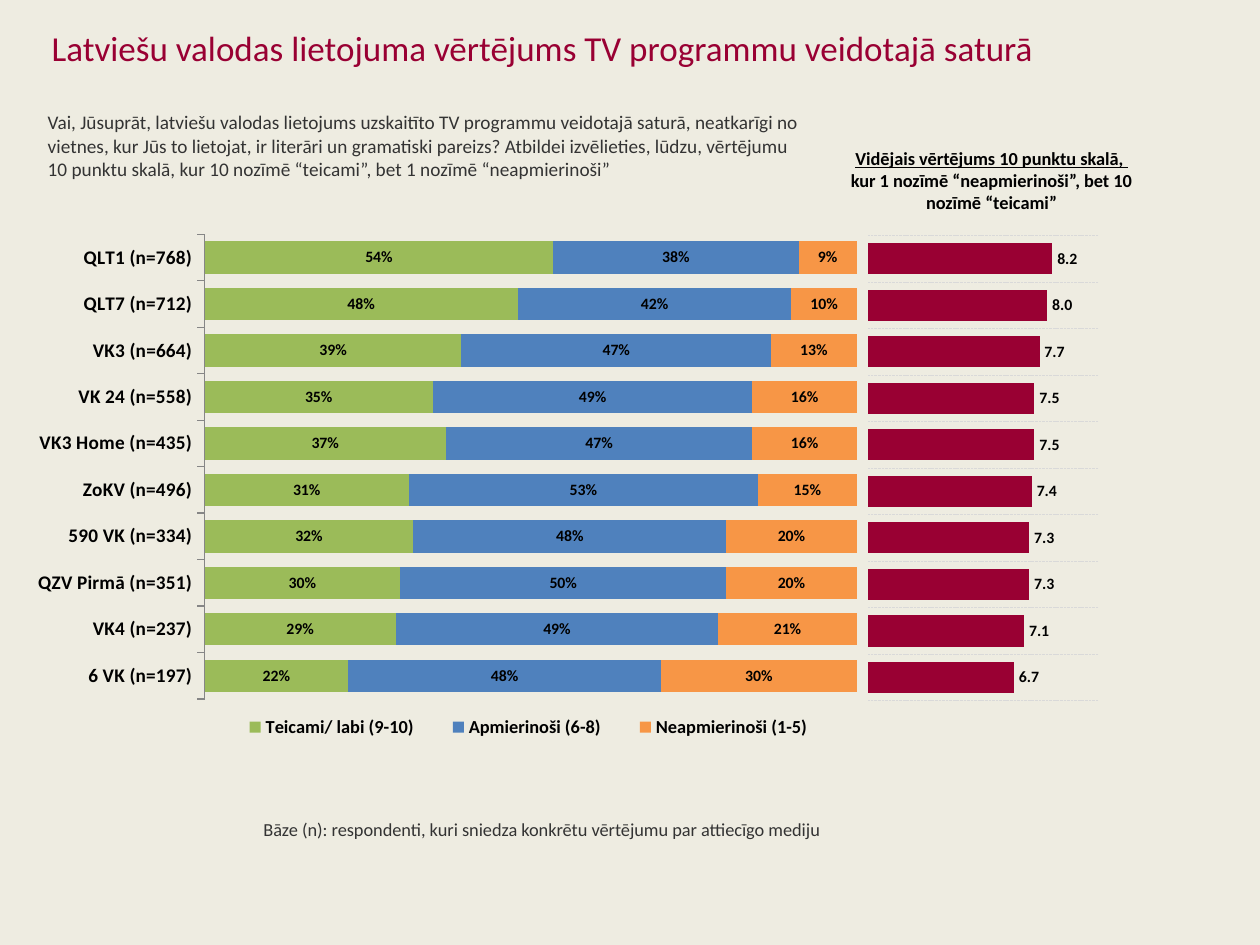
import pptx
import pptx.chart.data
import pptx.dml.color
import pptx.enum.chart
import pptx.enum.dml
import pptx.enum.text
import pptx.oxml
import pptx.oxml.ns
import pptx.util

COLUMNS, ROWS = 100, 75
FONT = "Calibri"
RGBColor = pptx.dml.color.RGBColor
CREAM = RGBColor(0xEE, 0xEC, 0xE1)
CRIMSON = RGBColor(0x99, 0x00, 0x33)
CHARCOAL = RGBColor(0x33, 0x33, 0x33)
BLACK = RGBColor(0, 0, 0)
GREEN = RGBColor(0x9B, 0xBB, 0x59)
BLUE = RGBColor(0x4F, 0x81, 0xBD)
ORANGE = RGBColor(0xF7, 0x96, 0x46)
AXIS_GREY = RGBColor(0x86, 0x86, 0x86)
GRID_GREY = RGBColor(0xD9, 0xD9, 0xD9)

CHANNELS = [
    ("6 VK (n=197)", 22, 48, 30, 6.7),
    ("VK4 (n=237)", 29, 49, 21, 7.1),
    ("QZV Pirmā (n=351)", 30, 50, 20, 7.3),
    ("590 VK (n=334)", 32, 48, 20, 7.3),
    ("ZoKV (n=496)", 31, 53, 15, 7.4),
    ("VK3 Home (n=435)", 37, 47, 16, 7.5),
    ("VK 24 (n=558)", 35, 49, 16, 7.5),
    ("VK3 (n=664)", 39, 47, 13, 7.7),
    ("QLT7 (n=712)", 48, 42, 10, 8.0),
    ("QLT1 (n=768)", 54, 38, 9, 8.2),
]
RATINGS = [
    ("Teicami/ labi (9-10)", GREEN),
    ("Apmierinoši (6-8)", BLUE),
    ("Neapmierinoši (1-5)", ORANGE),
]
QUESTION = (
    "Vai, Jūsuprāt, latviešu valodas lietojums uzskaitīto TV programmu veidotajā "
    "saturā, neatkarīgi no vietnes, kur Jūs to lietojat, ir literāri un gramatiski "
    "pareizs? Atbildei izvēlieties, lūdzu, vērtējumu 10 punktu skalā, kur 10 nozīmē "
    "“teicami”, bet 1 nozīmē “neapmierinoši”"
)


def grid_box(deck, column, row, columns, rows):
    across, down = deck.slide_width / COLUMNS, deck.slide_height / ROWS
    return [int(n) for n in (column * across, row * down, columns * across, rows * down)]


def style_font(font, size, color, bold=False):
    font.name = FONT
    font.size = pptx.util.Pt(size)
    font.bold = bold
    font.color.rgb = color


def add_title(deck, slide, wording, box):
    title = slide.shapes.title
    title.left, title.top, title.width, title.height = grid_box(deck, *box)
    frame = title.text_frame
    frame.text = wording
    frame.auto_size = pptx.enum.text.MSO_AUTO_SIZE.NONE
    frame.vertical_anchor = pptx.enum.text.MSO_ANCHOR.MIDDLE
    frame.paragraphs[0].alignment = pptx.enum.text.PP_ALIGN.LEFT
    style_font(frame.paragraphs[0].runs[0].font, 20, CRIMSON)


def add_text(deck, slide, wording, box, size, color, bold=False, centred=False):
    frame = slide.shapes.add_textbox(*grid_box(deck, *box)).text_frame
    frame.word_wrap = True
    frame.text = wording
    align = pptx.enum.text.PP_ALIGN
    for paragraph in frame.paragraphs:
        paragraph.alignment = align.CENTER if centred else align.LEFT
        style_font(paragraph.runs[0].font, size, color, bold)
    return frame


def set_layout(parent, index, shares, inner=False):
    for old in parent.findall(pptx.oxml.ns.qn("c:layout")):
        parent.remove(old)
    target = '<c:layoutTarget val="inner"/>' if inner else ""
    modes = "".join(f'<c:{edge}Mode val="edge"/>' for edge in "xy")
    places = "".join(f'<c:{key} val="{share}"/>' for key, share in zip("xywh", shares))
    parent.insert(index, pptx.oxml.parse_xml(
        f'<c:layout {pptx.oxml.ns.nsdecls("c")}><c:manualLayout>'
        f"{target}{modes}{places}</c:manualLayout></c:layout>"))


def add_bar_chart(deck, slide, kind, box, categories, series, number_format, gap, plot_shares):
    data = pptx.chart.data.CategoryChartData(number_format=number_format)
    data.categories = categories
    for name, _, values in series:
        data.add_series(name, values)
    chart = slide.shapes.add_chart(kind, *grid_box(deck, *box), data).chart
    chart.has_title = False
    chart.has_legend = False
    style_font(chart.font, 9, BLACK)
    chart.value_axis.visible = False
    chart.value_axis.has_major_gridlines = False
    plot = chart.plots[0]
    plot.gap_width = gap
    plot.vary_by_categories = False
    plot.has_data_labels = True
    plot.data_labels.show_value = True
    plot.data_labels.number_format = number_format
    plot.data_labels.number_format_is_linked = False
    style_font(plot.data_labels.font, 9, BLACK, True)
    for bars, (_, color, _) in zip(plot.series, series):
        bars.format.fill.solid()
        bars.format.fill.fore_color.rgb = color
        bars.invert_if_negative = False
    set_layout(chart._chartSpace.chart.plotArea, 0, plot_shares, inner=True)
    return chart


def add_rating_chart(deck, slide):
    names, *shares, _ = zip(*CHANNELS)
    series = [(name, color, [share / 100 for share in column])
              for (name, color), column in zip(RATINGS, shares)]
    chart = add_bar_chart(
        deck, slide, pptx.enum.chart.XL_CHART_TYPE.BAR_STACKED_100,
        (2.9, 16.2, 65.1, 44.4), names, series, "0%", 44, (0.205, 0.054, 0.795, 0.831))
    chart.plots[0].overlap = 100
    axis = chart.category_axis
    axis.major_tick_mark = pptx.enum.chart.XL_TICK_MARK.OUTSIDE
    axis.format.line.color.rgb = AXIS_GREY
    style_font(axis.tick_labels.font, 11, BLACK, True)
    chart.has_legend = True
    chart.legend.position = pptx.enum.chart.XL_LEGEND_POSITION.TOP
    chart.legend.include_in_layout = False
    style_font(chart.legend.font, 10.5, BLACK, True)
    set_layout(chart.legend._element, 1, (0.22, 0.9, 0.76, 0.07))


def add_average_chart(deck, slide):
    averages = [channel[-1] for channel in CHANNELS]
    ranks = [str(rank) for rank in range(1, len(CHANNELS) + 1)]
    chart = add_bar_chart(
        deck, slide, pptx.enum.chart.XL_CHART_TYPE.BAR_CLUSTERED,
        (67.9, 18, 19.8, 38.4), ranks, [("Series 1", CRIMSON, averages)],
        "0.0", 50, (0.05, 0.018, 0.924, 0.962))
    chart.plots[0].data_labels.position = pptx.enum.chart.XL_LABEL_POSITION.OUTSIDE_END
    chart.value_axis.minimum_scale = 1
    chart.value_axis.maximum_scale = 10
    chart.value_axis.major_unit = 3
    chart.category_axis.visible = False
    chart.category_axis.has_major_gridlines = True
    gridline = chart.category_axis.major_gridlines.format.line
    gridline.color.rgb = GRID_GREY
    gridline.width = pptx.util.Pt(0.5)
    gridline.dash_style = pptx.enum.dml.MSO_LINE.SQUARE_DOT


def main():
    deck = pptx.Presentation()
    deck.slide_width = pptx.util.Inches(10)
    deck.slide_height = pptx.util.Inches(7.5)
    slide = deck.slides.add_slide(deck.slide_layouts[5])
    slide.background.fill.solid()
    slide.background.fill.fore_color.rgb = CREAM

    add_title(deck, slide,
              "Latviešu valodas lietojuma vērtējums TV programmu veidotajā saturā",
              (3.1, 1.3, 93.7, 5))
    add_text(deck, slide, QUESTION, (2.8, 8.3, 62.5, 6.6), 11, CHARCOAL)
    add_rating_chart(deck, slide)
    add_average_chart(deck, slide)
    scale_note = add_text(
        deck, slide,
        "Vidējais vērtējums 10 punktu skalā, \n"
        "kur 1 nozīmē “neapmierinoši”, bet 10 nozīmē “teicami”",
        (64.9, 11.2, 27.6, 6.3), 10.5, BLACK, bold=True, centred=True)
    scale_note.paragraphs[0].runs[0].font.underline = True
    base_note = add_text(
        deck, slide,
        "Bāze (n): respondenti, kuri sniedza konkrētu vērtējumu par attiecīgo mediju",
        (20.9, 63.9, 46.5, 2.8), 10.5, CHARCOAL)
    base_note.margin_left = base_note.margin_right = 0
    base_note.margin_top = base_note.margin_bottom = 0
    base_note.vertical_anchor = pptx.enum.text.MSO_ANCHOR.BOTTOM

    deck.save("out.pptx")


if __name__ == "__main__":
    main()
